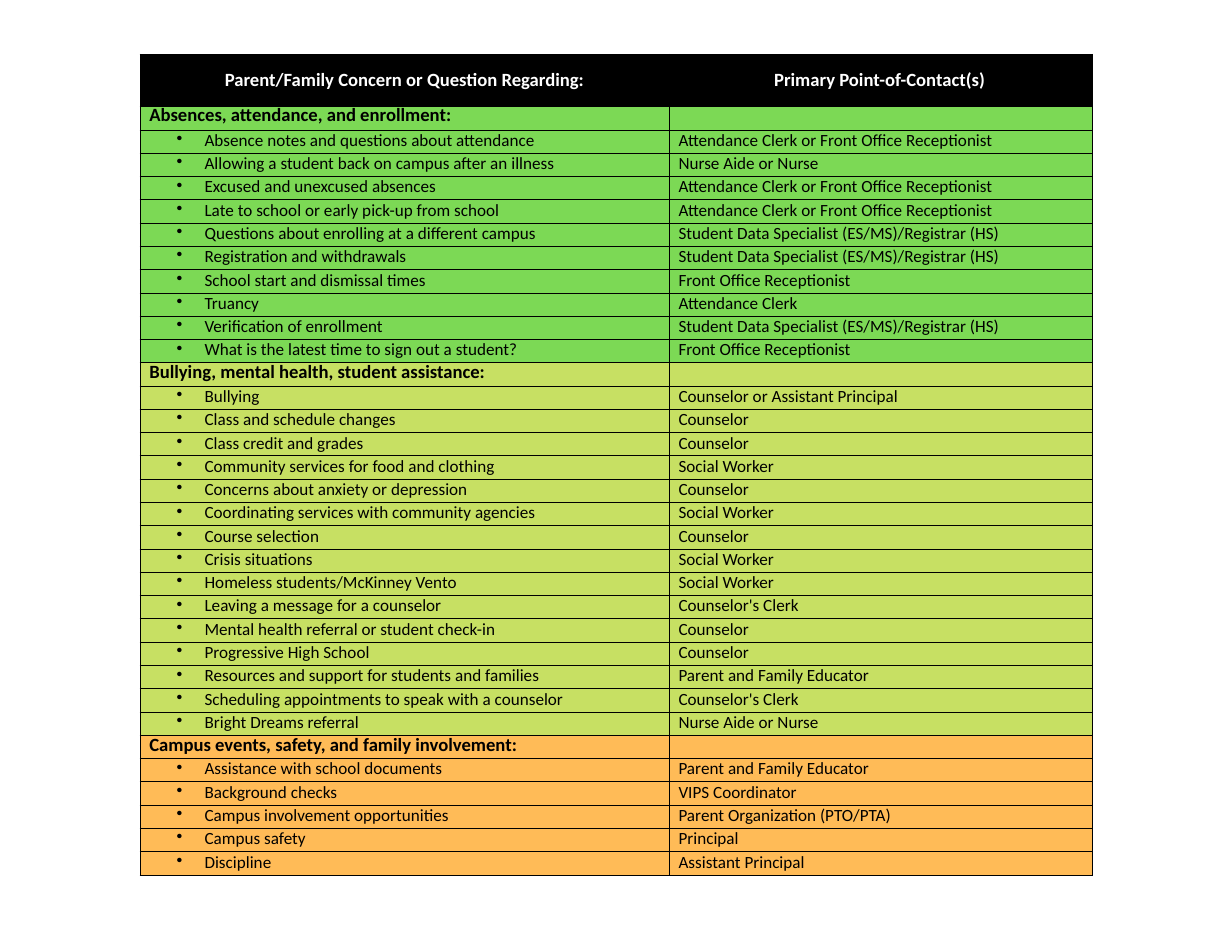
from lxml import etree
from pptx import Presentation
from pptx.dml.color import RGBColor
from pptx.enum.text import PP_ALIGN
from pptx.oxml.ns import qn
from pptx.util import Pt

CENTER = PP_ALIGN.CENTER
LEFT = PP_ALIGN.LEFT

COLORS = {
    "header": "000000", "header_text": "FFFFFF", "text": "000000", "border": "000000",
    "attendance": "7CD955", "wellbeing": "C7E063", "campus": "FFBB57",
}
FONT = "Calibri"
HEADER_HEIGHT = 33.75
CONCERN_SHARE = 340.2 / 612.2

HEADINGS = ("Parent/Family Concern or Question Regarding:", "Primary Point-of-Contact(s)")

FRONT_OFFICE = "Front Office Receptionist"
ATTENDANCE = "Attendance Clerk or Front Office Receptionist"
REGISTRAR = "Student Data Specialist (ES/MS)/Registrar (HS)"
NURSE = "Nurse Aide or Nurse"
COUNSELOR = "Counselor"
COUNSELOR_CLERK = "Counselor's Clerk"
SOCIAL_WORKER = "Social Worker"
EDUCATOR = "Parent and Family Educator"

# Section title, fill colour, line spacing, (concern, contact) pairs
SECTIONS = [
    ("Absences, attendance, and enrollment:", "attendance", 13.1, [
        ("Absence notes and questions about attendance", ATTENDANCE),
        ("Allowing a student back on campus after an illness", NURSE),
        ("Excused and unexcused absences", ATTENDANCE),
        ("Late to school or early pick-up from school", ATTENDANCE),
        ("Questions about enrolling at a different campus", REGISTRAR),
        ("Registration and withdrawals", REGISTRAR),
        ("School start and dismissal times", FRONT_OFFICE),
        ("Truancy", "Attendance Clerk"),
        ("Verification of enrollment", REGISTRAR),
        ("What is the latest time to sign out a student?", FRONT_OFFICE),
    ]),
    ("Bullying, mental health, student assistance:", "wellbeing", 13.6, [
        ("Bullying", "Counselor or Assistant Principal"),
        ("Class and schedule changes", COUNSELOR),
        ("Class credit and grades", COUNSELOR),
        ("Community services for food and clothing", SOCIAL_WORKER),
        ("Concerns about anxiety or depression", COUNSELOR),
        ("Coordinating services with community agencies", SOCIAL_WORKER),
        ("Course selection", COUNSELOR),
        ("Crisis situations", SOCIAL_WORKER),
        ("Homeless students/McKinney Vento", SOCIAL_WORKER),
        ("Leaving a message for a counselor", COUNSELOR_CLERK),
        ("Mental health referral or student check-in", COUNSELOR),
        ("Progressive High School", COUNSELOR),
        ("Resources and support for students and families", EDUCATOR),
        ("Scheduling appointments to speak with a counselor", COUNSELOR_CLERK),
        ("Bright Dreams referral", NURSE),
    ]),
    ("Campus events, safety, and family involvement:", "campus", 13.6, [
        ("Assistance with school documents", EDUCATOR),
        ("Background checks", "VIPS Coordinator"),
        ("Campus involvement opportunities", "Parent Organization (PTO/PTA)"),
        ("Campus safety", "Principal"),
        ("Discipline", "Assistant Principal"),
    ]),
]


def write(cell, text, *, size=11, bold=False, color="text", align=LEFT,
          indent=6, hanging=0, bullet=None, line_spacing=None):
    paragraph = cell.text_frame.paragraphs[0]
    paragraph.alignment = align
    if line_spacing:
        paragraph.line_spacing = Pt(line_spacing)
    properties = paragraph._p.get_or_add_pPr()
    properties.set("marL", str(Pt(indent)))
    properties.set("indent", str(Pt(-hanging)))
    if bullet:
        etree.SubElement(properties, qn("a:buChar"), char=bullet)
    if not text:  # keeps an empty cell from stretching its row
        etree.SubElement(paragraph._p, qn("a:endParaRPr"), sz=str(size * 100))
        return
    run = paragraph.add_run()
    run.text = text
    run.font.name = FONT
    run.font.size = Pt(size)
    run.font.bold = bold
    run.font.color.rgb = RGBColor.from_string(COLORS[color])


def style_cell(cell, fill, margin_top=0):
    cell.margin_left = cell.margin_right = cell.margin_bottom = 0
    cell.margin_top = Pt(margin_top)
    properties = cell._tc.get_or_add_tcPr()
    for side in ("lnL", "lnR", "lnT", "lnB"):
        line = etree.SubElement(properties, qn(f"a:{side}"), w=str(Pt(0.5)))
        solid = etree.SubElement(line, qn("a:solidFill"))
        etree.SubElement(solid, qn("a:srgbClr"), val=COLORS["border"])
    cell.fill.solid()
    cell.fill.fore_color.rgb = RGBColor.from_string(COLORS[fill])


def add_contact_table(slide, left, top, width, height):
    row_count = 1 + sum(1 + len(entries) for *_, entries in SECTIONS)
    table = slide.shapes.add_table(
        row_count, 2, Pt(left), Pt(top), Pt(width), Pt(height)).table
    table.first_row = table.horz_banding = False
    table.columns[0].width = Pt(width * CONCERN_SHARE)
    table.columns[1].width = Pt(width * (1 - CONCERN_SHARE))
    row_height = (height - HEADER_HEIGHT) / (row_count - 1)
    for row in table.rows:
        row.height = Pt(row_height)
    table.rows[0].height = Pt(HEADER_HEIGHT)

    rows = iter(table.rows)
    concern, contact = next(rows).cells
    for cell in (concern, contact):
        style_cell(cell, "header", margin_top=9.1)
    heading = {"size": 12, "bold": True, "color": "header_text"}
    write(concern, HEADINGS[0], align=CENTER, indent=0, **heading)
    write(contact, HEADINGS[1], indent=67.5, **heading)

    for title, fill, line_spacing, entries in SECTIONS:
        concern, contact = next(rows).cells
        style_cell(concern, fill)
        style_cell(contact, fill)
        write(concern, title, size=12, bold=True, line_spacing=line_spacing)
        write(contact, "")
        for question, person in entries:
            concern, contact = next(rows).cells
            style_cell(concern, fill)
            style_cell(contact, fill)
            write(concern, question, indent=41.5, hanging=18, bullet="•")
            write(contact, person)


def main():
    deck = Presentation()
    deck.slide_width, deck.slide_height = Pt(792), Pt(612)
    slide = deck.slides.add_slide(deck.slide_layouts[6])
    add_contact_table(slide, 90, 34.8, 612.2, 527.8)
    deck.save("out.pptx")


if __name__ == "__main__":
    main()
